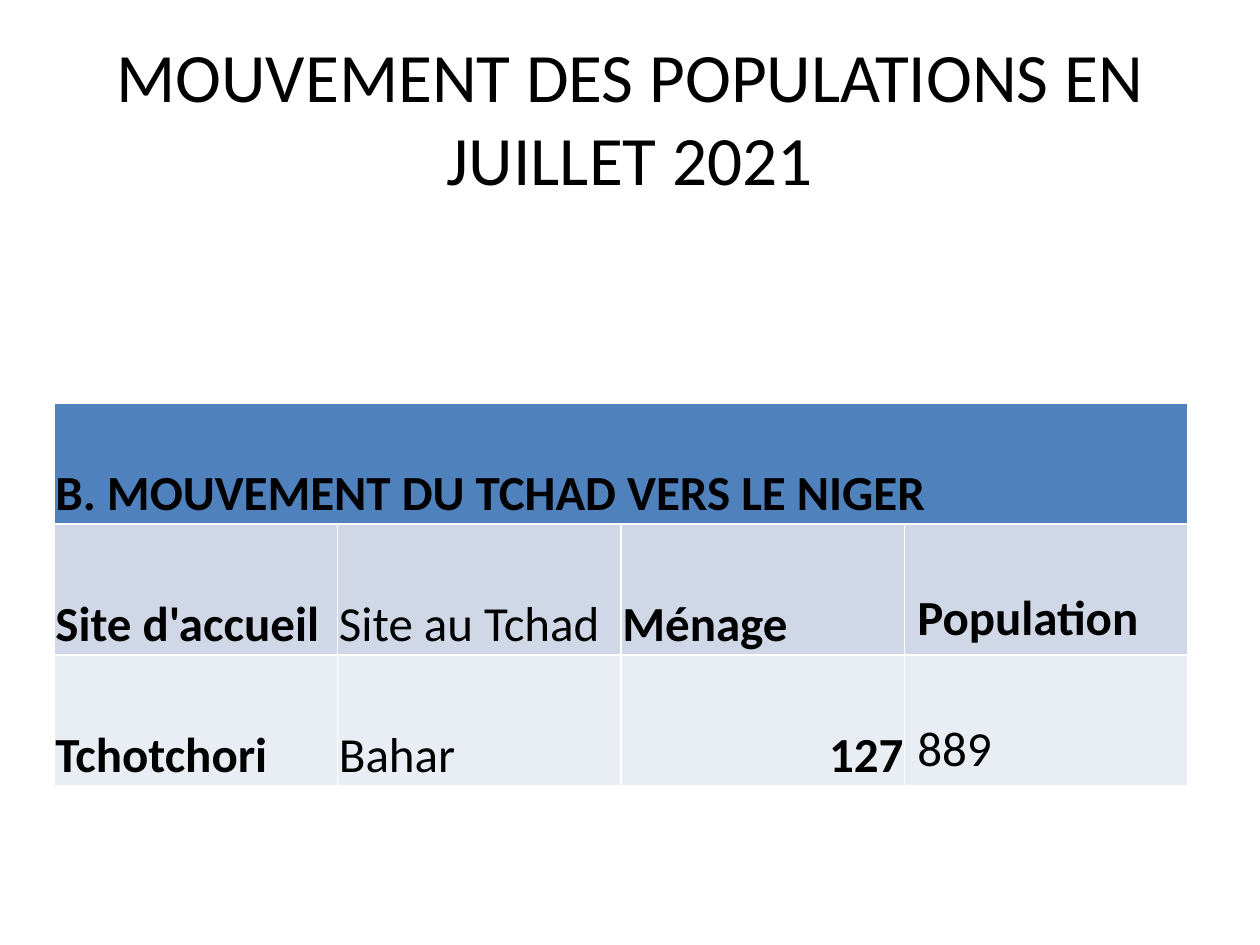
from pptx import Presentation
from pptx.dml.color import RGBColor
from pptx.enum.text import MSO_ANCHOR, PP_ALIGN
from pptx.util import Inches, Pt

BLACK = RGBColor(0x00, 0x00, 0x00)
HEADER_BLUE = RGBColor(0x4F, 0x81, 0xBD)
BAND_DARK = RGBColor(0xD0, 0xD8, 0xE8)
BAND_LIGHT = RGBColor(0xE9, 0xED, 0xF4)

ROWS = [
    ["B. MOUVEMENT DU TCHAD VERS LE NIGER"],
    ["Site d'accueil", "Site au Tchad", "Ménage", "Population"],
    ["Tchotchori", "Bahar", "127", "889"],
]
ROW_FILLS = [HEADER_BLUE, BAND_DARK, BAND_LIGHT]
ROW_HEIGHTS = [0.96, 1.04, 1.04]
COLUMNS = 4
REGULAR_TEXTS = {"Site au Tchad", "Bahar", "889"}


def format_font(p, size, bold):
    p.font.name = "Calibri"
    p.font.size = Pt(size)
    p.font.bold = bold
    p.font.color.rgb = BLACK


def add_title(s, text):
    title = s.shapes.title
    title.left, title.top = Inches(0.5), Inches(0.3)
    title.width, title.height = Inches(9), Inches(1.25)
    tf = title.text_frame
    tf.text = text
    tf.vertical_anchor = MSO_ANCHOR.MIDDLE
    p = tf.paragraphs[0]
    p.alignment = PP_ALIGN.CENTER
    format_font(p, 39.6, False)


def set_margins(cell, side, top, bottom):
    cell.margin_left = cell.margin_right = Inches(side)
    cell.margin_top, cell.margin_bottom = Inches(top), Inches(bottom)


def fill_cell(cell, text, color, padded):
    """Write one cell; padded cells keep the wide default margins."""
    cell.fill.solid()
    cell.fill.fore_color.rgb = color
    cell.vertical_anchor = MSO_ANCHOR.BOTTOM
    if padded:
        set_margins(cell, 0.1, 0.05, 0.05)
    else:
        set_margins(cell, 0.01, 0.01, 0)
    cell.text = text
    p = cell.text_frame.paragraphs[0]
    p.alignment = PP_ALIGN.RIGHT if text == "127" else PP_ALIGN.LEFT
    format_font(p, 28, text not in REGULAR_TEXTS)


def add_movement_table(s):
    table = s.shapes.add_table(
        len(ROWS), COLUMNS, Inches(0.43), Inches(3.2),
        Inches(9), Inches(sum(ROW_HEIGHTS)),
    ).table
    table.cell(0, 0).merge(table.cell(0, COLUMNS - 1))
    for i, (texts, color, height) in enumerate(zip(ROWS, ROW_FILLS, ROW_HEIGHTS)):
        table.rows[i].height = Inches(height)
        for j, text in enumerate(texts):
            fill_cell(table.cell(i, j), text, color, padded=j == COLUMNS - 1)


def main():
    prs = Presentation()
    prs.slide_width, prs.slide_height = Inches(10), Inches(7.5)
    s = prs.slides.add_slide(prs.slide_layouts[5])
    add_title(s, "MOUVEMENT DES POPULATIONS EN JUILLET 2021")
    add_movement_table(s)
    prs.save("out.pptx")


if __name__ == "__main__":
    main()
